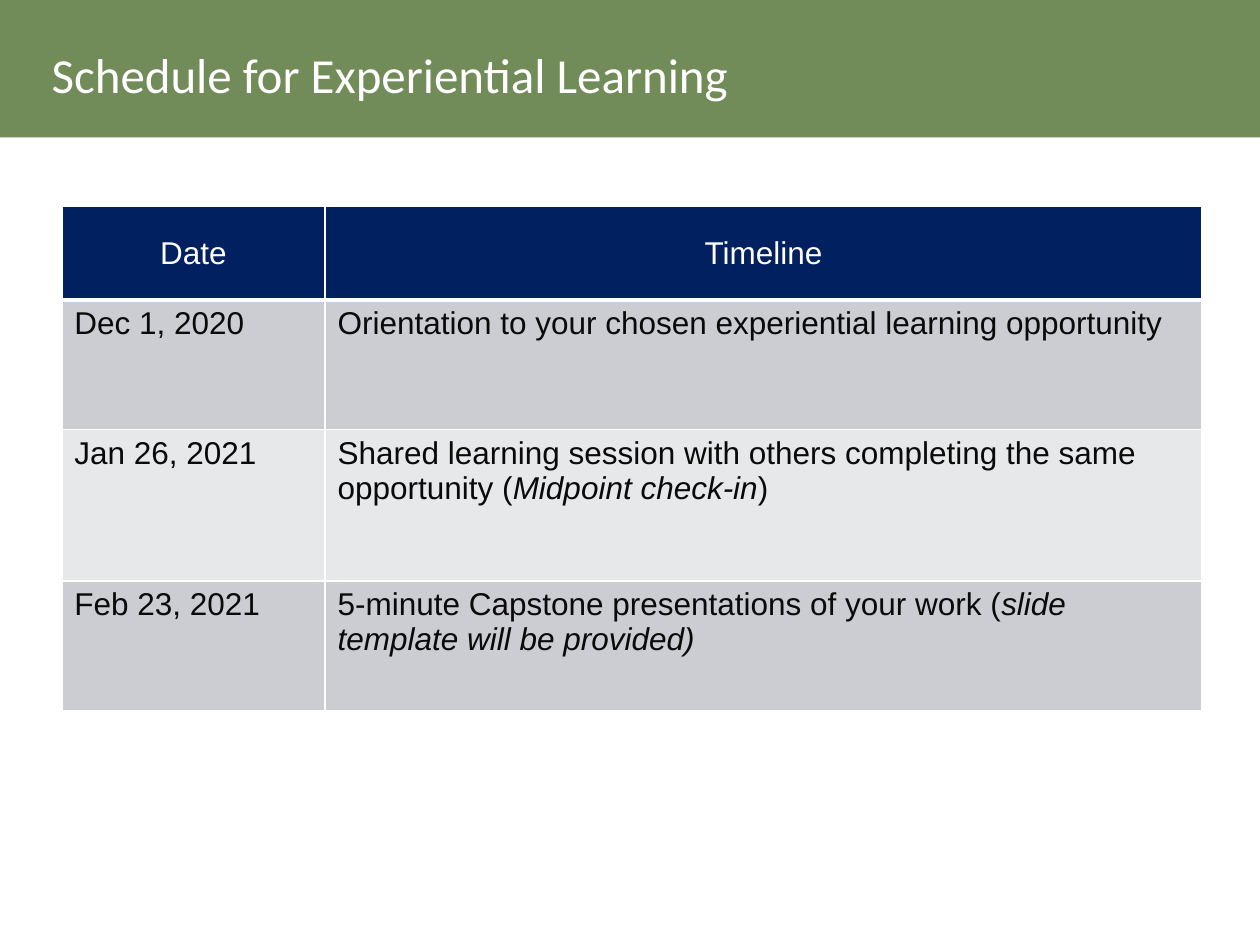
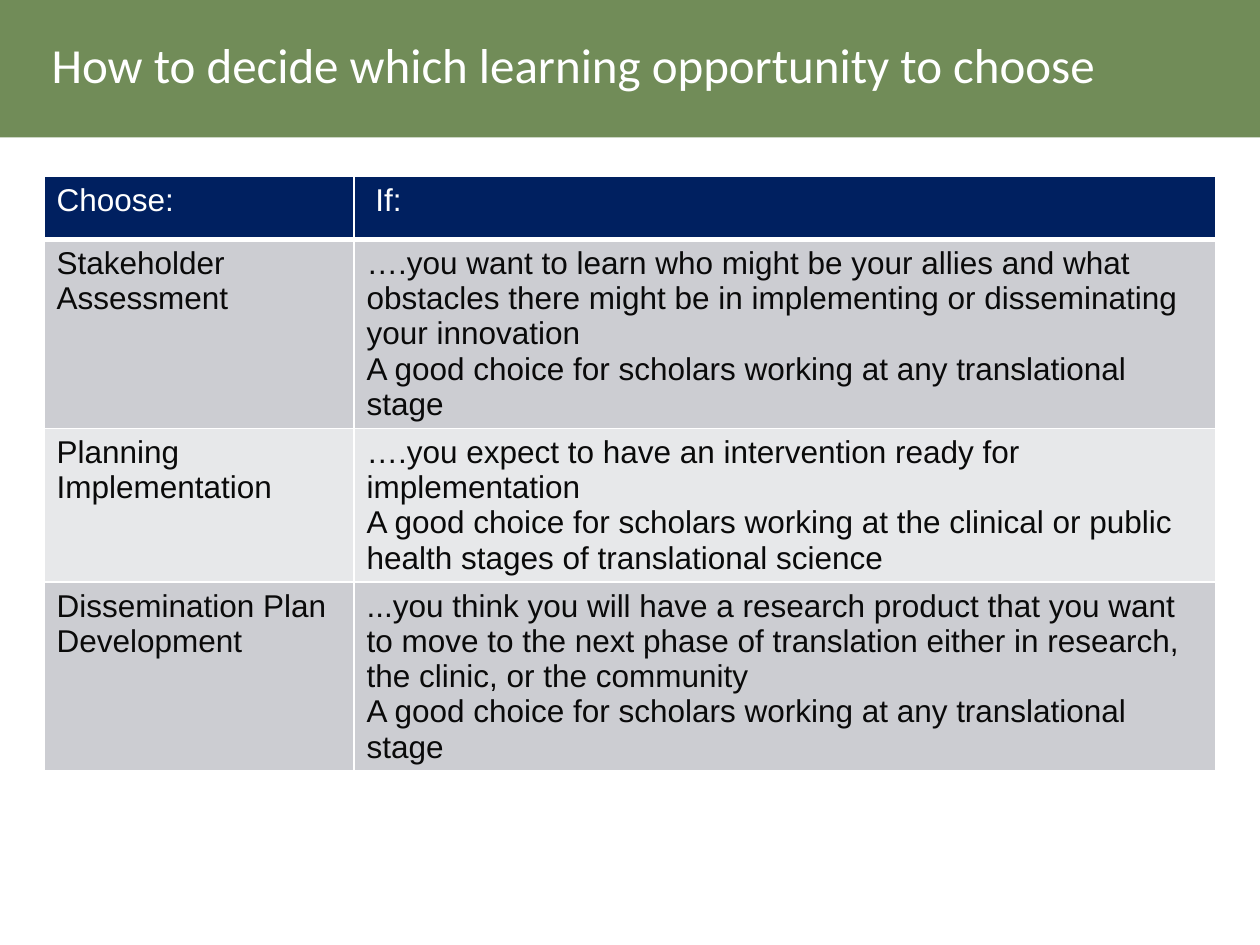
import pptx
import pptx.dml.color
import pptx.enum.shapes
import pptx.enum.text
import pptx.oxml
import pptx.oxml.ns
import pptx.util

# The slide is a grid of 100 columns by 75 rows with square units.
UNIT = pptx.util.Inches(0.1)
SLIDE_COLUMNS, SLIDE_ROWS = 100, 75
BAND_ROWS = 10.9

GREEN, NAVY, WHITE, INK = "718C58", "002060", "FFFFFF", "0A0A0A"
STRIPES = ("CCCDD2", "E7E8EA")

TITLE_FORMAT = {"name": "Calibri", "size": pptx.util.Pt(28), "bold": False}
CELL_FORMAT = {"name": "Arial", "size": pptx.util.Pt(18), "bold": False}

SLIDES = [
    {
        "title": "Schedule for Experiential Learning",
        "title_box": (3.1, 3, 93.9, 10.3),
        "table_box": (4.9, 16.4, 90.5),
        "first_column": 20.9,
        "row_heights": (7.4, 10.3, 12, 10.3),
        "centred_header": True,
        "rows": [
            (["Date"], ["Timeline"]),
            (["Dec 1, 2020"],
             ["Orientation to your chosen experiential learning opportunity"]),
            (["Jan 26, 2021"],
             ["Shared learning session with others completing the same "
              "opportunity (*Midpoint check-in*)"]),
            (["Feb 23, 2021"],
             ["5-minute Capstone presentations of your work "
              "(*slide template will be provided)*"]),
        ],
    },
    {
        "title": "How to decide which learning opportunity to choose",
        "title_box": (3.1, 2.2, 93.9, 7.9),
        "table_box": (3.5, 14, 93),
        "first_column": 24.6,
        "row_heights": (5, 15, 12.2, 15),
        "centred_header": False,
        "rows": [
            (["Choose:"], [" If:"]),
            (["Stakeholder Assessment"],
             ["….you want to learn who might be your allies and what "
              " obstacles there might be in implementing or disseminating "
              "your innovation",
              "A good choice for scholars working at any translational stage"]),
            (["Planning Implementation"],
             ["….you expect to have an intervention ready for implementation",
              "A good choice for scholars working at the clinical or public "
              "health stages of translational science"]),
            (["Dissemination Plan Development"],
             ["...you think you will have a research product that you want to "
              "move to the next phase of translation either in research, the "
              "clinic, or the community",
              "A good choice for scholars working at any translational stage"]),
        ],
    },
]


def grid(*units):
    """Turn grid units into slide lengths."""
    return [round(unit * UNIT) for unit in units]


def color(value):
    return pptx.dml.color.RGBColor.from_string(value)


def fill_solid(target, value):
    target.fill.solid()
    target.fill.fore_color.rgb = color(value)


def format_font(font, values, value):
    for name, setting in values.items():
        setattr(font, name, setting)
    font.color.rgb = color(value)


def add_title(slide, text, box):
    """Fill the title placeholder and put the green band behind it."""
    title = slide.shapes.title
    title.left, title.top, title.width, title.height = grid(*box)
    frame = title.text_frame
    frame.text = text
    frame.word_wrap = True
    frame.auto_size = pptx.enum.text.MSO_AUTO_SIZE.NONE
    frame.vertical_anchor = pptx.enum.text.MSO_ANCHOR.TOP
    paragraph = frame.paragraphs[0]
    paragraph.alignment = pptx.enum.text.PP_ALIGN.LEFT
    format_font(paragraph.runs[0].font, TITLE_FORMAT, WHITE)

    band = slide.shapes.add_shape(
        pptx.enum.shapes.MSO_SHAPE.RECTANGLE, *grid(0, 0, SLIDE_COLUMNS, BAND_ROWS))
    band.shadow.inherit = False
    band.line.fill.background()
    fill_solid(band, GREEN)
    title.element.addprevious(band.element)


def set_borders(cell, bottom_width):
    properties = cell._tc.get_or_add_tcPr()
    widths = {"lnL": 1, "lnR": 1, "lnT": 1, "lnB": bottom_width}
    for position, (side, width) in enumerate(widths.items()):
        properties.insert(position, pptx.oxml.parse_xml(
            f'<a:{side} {pptx.oxml.ns.nsdecls("a")} w="{pptx.util.Pt(width)}">'
            f'<a:solidFill><a:srgbClr val="{WHITE}"/></a:solidFill></a:{side}>'))


def write_cell(cell, texts, text_color, alignment):
    """Write one paragraph per text; asterisks enclose italics."""
    frame = cell.text_frame
    for index, text in enumerate(texts):
        paragraph = frame.add_paragraph() if index else frame.paragraphs[0]
        paragraph.alignment = alignment
        for part_index, part in enumerate(text.split("*")):
            if part:
                run = paragraph.add_run()
                run.text = part
                format_font(run.font, CELL_FORMAT, text_color)
                run.font.italic = part_index % 2 == 1


def add_striped_table(slide, box, first_column, row_heights, rows, centred_header):
    left, top, width = box
    table = slide.shapes.add_table(
        len(rows), 2, *grid(left, top, width, sum(row_heights))).table
    table.horz_banding = False
    for column, length in zip(table.columns, grid(first_column, width - first_column)):
        column.width = length
    for row, length in zip(table.rows, grid(*row_heights)):
        row.height = length

    for row_index, row in enumerate(rows):
        header = row_index == 0
        centred = header and centred_header
        alignment = pptx.enum.text.PP_ALIGN.CENTER if centred else pptx.enum.text.PP_ALIGN.LEFT
        for column_index, texts in enumerate(row):
            cell = table.cell(row_index, column_index)
            if centred:
                cell.vertical_anchor = pptx.enum.text.MSO_ANCHOR.MIDDLE
            fill_solid(cell, NAVY if header else STRIPES[(row_index - 1) % 2])
            set_borders(cell, 3 if header else 1)
            write_cell(cell, texts, WHITE if header else INK, alignment)


def add_table_slide(presentation, content):
    title_only = presentation.slide_layouts.get_by_name("Title Only")
    slide = presentation.slides.add_slide(title_only)
    add_title(slide, content["title"], content["title_box"])
    add_striped_table(slide, content["table_box"], content["first_column"],
                      content["row_heights"], content["rows"],
                      content["centred_header"])


def main():
    presentation = pptx.Presentation()
    presentation.slide_width, presentation.slide_height = grid(SLIDE_COLUMNS, SLIDE_ROWS)
    for content in SLIDES:
        add_table_slide(presentation, content)
    presentation.save("out.pptx")


if __name__ == "__main__":
    main()
